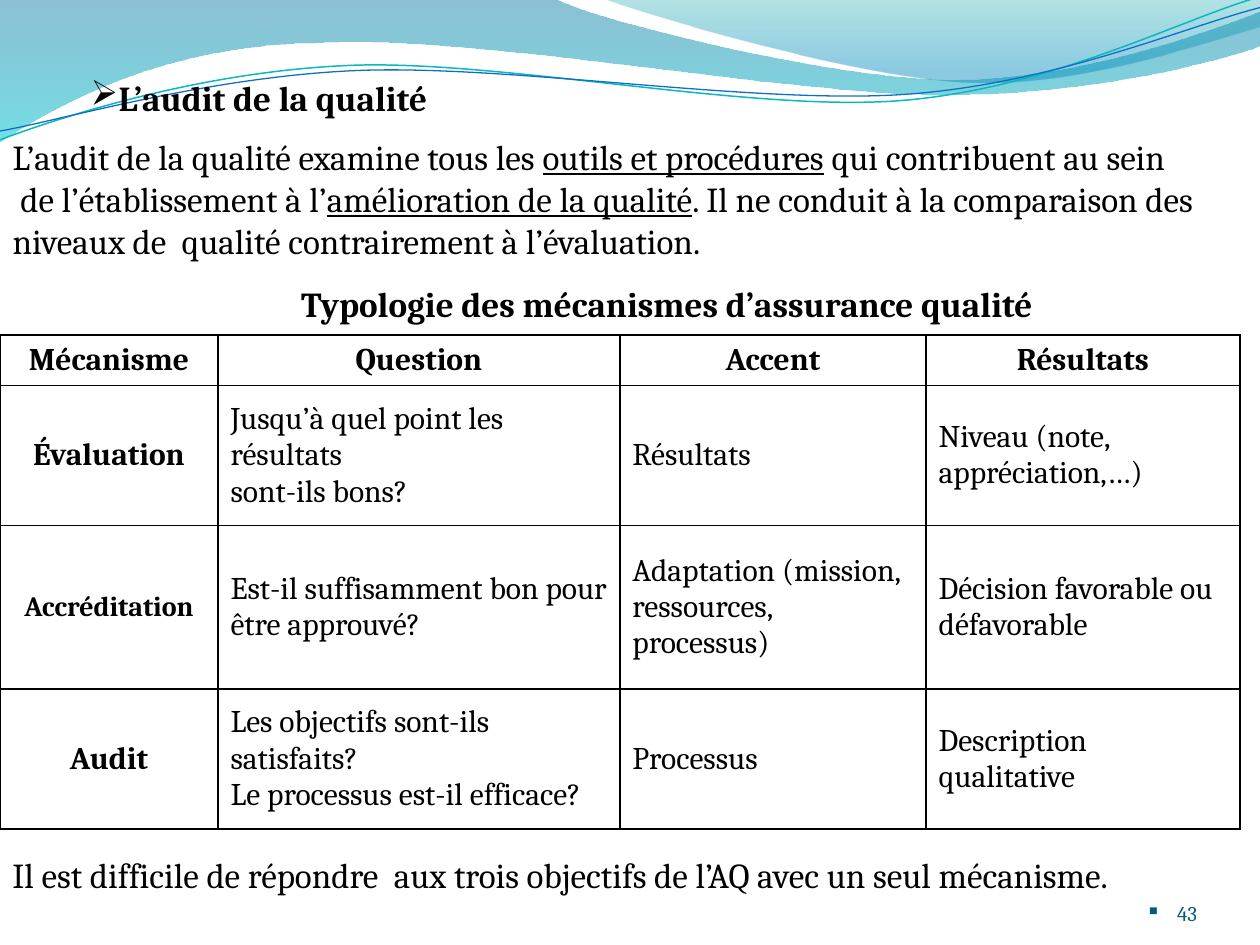
import math

import pptx
import pptx.util
import pptx.dml.color
import pptx.enum.text
from pptx.oxml.ns import qn
import lxml.etree

Inches, Pt = pptx.util.Inches, pptx.util.Pt
ALIGN = pptx.enum.text.PP_ALIGN
ANCHOR = pptx.enum.text.MSO_ANCHOR

COLORS = {"text": "000000", "number": "045D75", "blue": "0074A1", "cyan": "00C6CF",
          "teal": "00A1A9", "azure": "008BBF", "teal line": "0AB8BF", "blue line": "0F6FC6"}

# Content: paragraphs are lists of (text, underlined) runs or plain strings
HEADING = ["L’audit de la qualité"]
DEFINITION = [
    [("L’audit de la qualité examine tous les ", False), ("outils et procédures", True),
     (" qui contribuent au sein", False)],
    [(" de l’établissement à l’", False), ("amélioration de la qualité", True),
     (". Il ne conduit à la comparaison des niveaux de  qualité contrairement à l’évaluation.",
      False)],
]
TABLE_TITLE = ["Typologie des mécanismes d’assurance qualité"]
CONCLUSION = ["Il est difficile de répondre  aux trois objectifs de l’AQ avec un seul mécanisme."]
PAGE_NUMBER = ["43"]
MECHANISMS = [
    [["Mécanisme"], ["Question"], ["Accent"], ["Résultats"]],
    [["Évaluation"], ["Jusqu’à quel point les résultats", "sont-ils bons?"],
     ["Résultats"], ["Niveau (note, appréciation,…)"]],
    [["Accréditation"], ["Est-il suffisamment bon pour", "être approuvé?"],
     ["Adaptation (mission,", "ressources, processus)"],
     ["Décision favorable ou défavorable"]],
    [["Audit"], ["Les objectifs sont-ils satisfaits?", "Le processus est-il efficace?"],
     ["Processus"], ["Description qualitative"]],
]
COLUMN_WIDTHS = [1.73, 3.19, 2.43, 2.49]
ROW_HEIGHTS = [0.4, 1.11, 1.3, 1.11]

# Waves: box, then a start point, line ends (2 numbers) and curve segments (6 numbers)
WAVE_FILLS = [
    ((-0.01, -0.01, 10.02, 1.14),
     [(0, -0.01), (4.4, -0.01), (4.76, 0.17, 6.64, 0.63, 7.58, 0.63),
      (8.53, 0.63, 9.58, 0.26, 10, 0.09), (10.01, 0.36),
      (9.83, 0.44, 8.7, 0.76, 7.46, 0.75), (6.22, 0.75, 3.82, 0.28, 2.57, 0.34),
      (1.29, 0.35, 0.46, 0.83, -0.01, 1.13), (0, -0.01)],
     [(0, "blue", 45), (1, "cyan", 55)]),
    ((4.79, -0.01, 5.21, 0.7),
     [(4.79, -0.01), (5.09, 0.11, 6.82, 0.62, 7.69, 0.65),
      (8.56, 0.69, 9.61, 0.32, 10, 0.21), (10, 0), (4.79, -0.01)],
     [(0, "teal", 30), (0.8, "azure", 45)]),
]
WAVE_LINES = [
    ((-0.02, 0.22, 10.02, 0.71),
     [(0, 1.11), (0.48, 0.93, 1.58, 0.57, 2.77, 0.52), (3.95, 0.47, 5.93, 0.89, 7.13, 0.8),
      (8.33, 0.71, 9.38, 0.15, 9.98, -0.02)], "teal line", 0.85),
    ((-0.02, 0.3, 10.03, 0.58),
     [(0, 1.04), (0.47, 0.96, 1.64, 0.61, 2.83, 0.56), (4.03, 0.51, 5.97, 0.83, 7.17, 0.75),
      (8.36, 0.67, 9.41, 0.21, 10, 0.06)], "blue line", 0.75),
]
LINE_TILT = -2.7


def rgb(name):
    return pptx.dml.color.RGBColor.from_string(COLORS[name])


def write_text(frame, paragraphs, size=20, bold=False, align=ALIGN.LEFT, color="text",
               bullet=None, hanging=0, anchor=ANCHOR.MIDDLE, wrap=True):
    frame.word_wrap = wrap
    frame.vertical_anchor = anchor
    for index, runs in enumerate(paragraphs):
        paragraph = frame.paragraphs[0] if index == 0 else frame.add_paragraph()
        paragraph.alignment = align
        paragraph.space_before = Pt(0)
        properties = paragraph._p.get_or_add_pPr()
        properties.set("marL", str(Inches(hanging)))
        properties.set("indent", str(-Inches(hanging)))
        mark = lxml.etree.SubElement(properties, qn("a:buChar" if bullet else "a:buNone"))
        if bullet:
            mark.set("char", bullet)
        for text, underlined in [(runs, False)] if isinstance(runs, str) else runs:
            run = paragraph.add_run()
            run.text = text
            run.font.name = "Cambria"
            run.font.size = Pt(size)
            run.font.bold = bold
            run.font.underline = underlined
            run.font.color.rgb = rgb(color)


def place(shape, left, top, width, height):
    shape.left, shape.top = Inches(left), Inches(top)
    shape.width, shape.height = Inches(width), Inches(height)


def add_wave(slide, box, segments, tilt=0):
    """Draw lines and cubic curves; a tilted wave is levelled first, then rotated."""
    left, top, width, height = box
    builder = slide.shapes.build_freeform(scale=Inches(1))
    builder.add_line_segments([(1, 1)], close=False)
    wave = builder.convert_to_shape()
    place(wave, *box)
    wave.rotation = tilt % 360
    wave.shadow.inherit = False

    outline = wave._element.find(".//" + qn("a:path"))
    outline.set("w", str(Inches(width)))
    outline.set("h", str(Inches(height)))
    for step in list(outline):
        outline.remove(step)
    cosine, sine = math.cos(math.radians(-tilt)), math.sin(math.radians(-tilt))
    for index, segment in enumerate(segments):
        kind = "a:moveTo" if index == 0 else "a:lnTo" if len(segment) == 2 else "a:cubicBezTo"
        step = lxml.etree.SubElement(outline, qn(kind))
        for x, y in zip(segment[::2], segment[1::2]):
            dx, dy = x - left - width / 2, y - top - height / 2
            lxml.etree.SubElement(
                step, qn("a:pt"),
                x=str(Inches(dx * cosine - dy * sine + width / 2)),
                y=str(Inches(dx * sine + dy * cosine + height / 2)))
    if segments[0] == segments[-1]:
        lxml.etree.SubElement(outline, qn("a:close"))
    return wave


def add_borders(cell):
    properties = cell._tc.get_or_add_tcPr()
    for side in ("a:lnL", "a:lnR", "a:lnT", "a:lnB"):
        border = lxml.etree.SubElement(properties, qn(side), w=str(Pt(1)))
        fill = lxml.etree.SubElement(border, qn("a:solidFill"))
        lxml.etree.SubElement(fill, qn("a:srgbClr"), val=COLORS["text"])


def main():
    deck = pptx.Presentation()
    deck.slide_width, deck.slide_height = Inches(10), Inches(7.5)
    slide = deck.slides.add_slide(deck.slide_layouts[1])

    # Waves at the top
    for box, segments, stops in WAVE_FILLS:
        wave = add_wave(slide, box, segments)
        wave.line.fill.background()
        wave.fill.gradient()
        wave.fill.gradient_angle = 270
        for stop, (position, color, opacity) in zip(wave.fill.gradient_stops, stops):
            stop.position = position
            stop.color.rgb = rgb(color)
            tint = stop._gs.find(qn("a:srgbClr"))
            lxml.etree.SubElement(tint, qn("a:alpha"), val=str(opacity * 1000))
    for box, segments, color, width in WAVE_LINES:
        wave = add_wave(slide, box, segments, LINE_TILT)
        wave.fill.background()
        wave.line.color.rgb = rgb(color)
        wave.line.width = Pt(width)

    # Heading and definition, brought in front of the waves
    heading, definition = slide.shapes.title, slide.placeholders[1]
    place(heading, 0.62, 0.55, 3.07, 0.44)
    place(definition, 0, 1.02, 9.84, 1.11)
    write_text(heading.text_frame, HEADING, bold=True, bullet="➢", wrap=False)
    write_text(definition.text_frame, DEFINITION)
    for holder in (heading, definition):
        holder.text_frame.auto_size = pptx.enum.text.MSO_AUTO_SIZE.NONE
        slide.shapes._spTree.append(holder._element)

    # Table title, conclusion and page number
    for paragraphs, box, style in [
        (TABLE_TITLE, (1.88, 2.19, 6.83, 0.44), dict(bold=True, align=ALIGN.CENTER)),
        (CONCLUSION, (0, 6.72, 9.61, 0.44), {}),
        (PAGE_NUMBER, (8.67, 6.95, 0.83, 0.4),
         dict(size=12, color="number", align=ALIGN.RIGHT, bullet="▪", hanging=0.25,
              anchor=ANCHOR.BOTTOM)),
    ]:
        label = slide.shapes.add_textbox(*map(Inches, box))
        write_text(label.text_frame, paragraphs, **style)
    number = label.text_frame
    number.margin_left = number.margin_right = number.margin_top = number.margin_bottom = 0
    number.paragraphs[0].line_spacing = 0.9

    # Table of mechanisms
    table = slide.shapes.add_table(
        len(MECHANISMS), len(COLUMN_WIDTHS), Inches(0), Inches(2.66),
        Inches(sum(COLUMN_WIDTHS)), Inches(sum(ROW_HEIGHTS))).table
    table.first_row = table.horz_banding = False
    for column, width in zip(table.columns, COLUMN_WIDTHS):
        column.width = Inches(width)
    for r, (row, height) in enumerate(zip(MECHANISMS, ROW_HEIGHTS)):
        table.rows[r].height = Inches(height)
        for c, paragraphs in enumerate(row):
            cell = table.cell(r, c)
            label = r == 0 or c == 0
            write_text(cell.text_frame, paragraphs, bold=label,
                       size=16 if paragraphs == ["Accréditation"] else 18,
                       align=ALIGN.CENTER if label else ALIGN.LEFT)
            cell.vertical_anchor = ANCHOR.MIDDLE
            add_borders(cell)
            cell.fill.background()

    deck.save("out.pptx")


if __name__ == "__main__":
    main()
